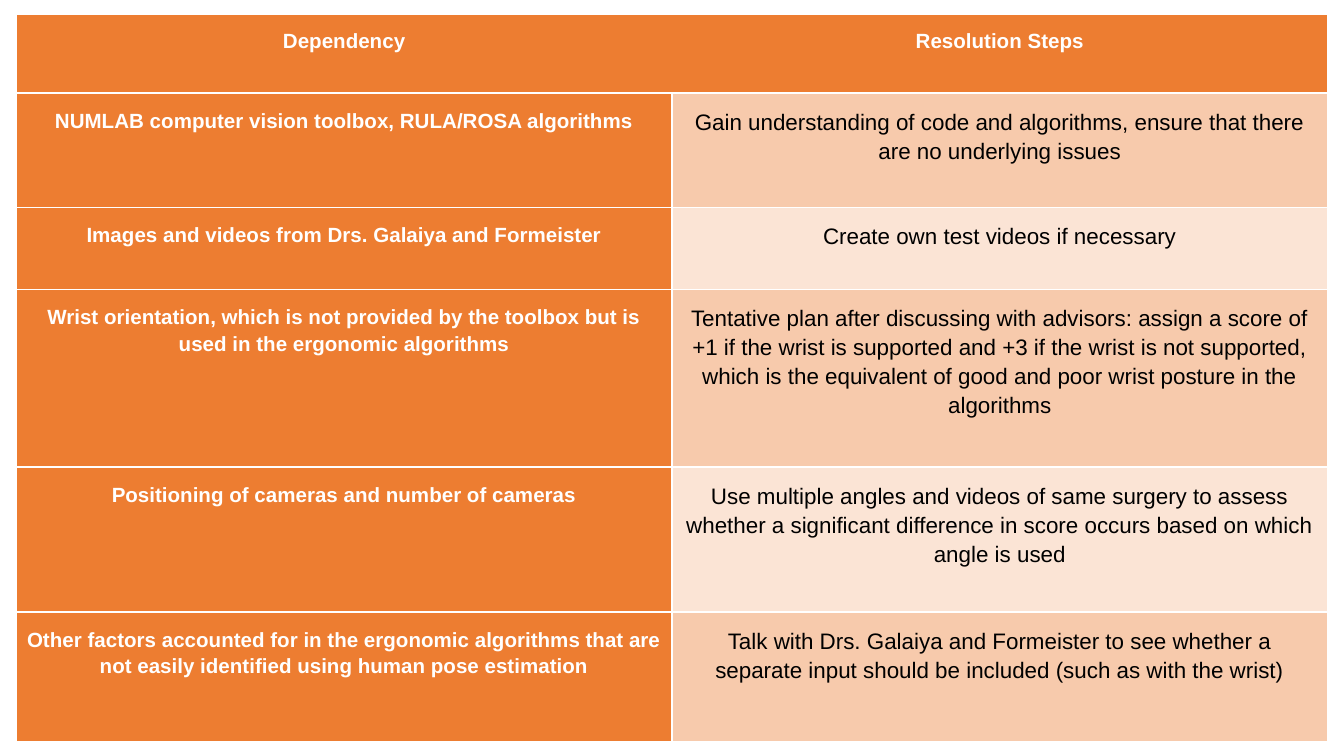
import pptx
import pptx.dml.color
import pptx.enum.text
import pptx.oxml
import pptx.oxml.ns
import pptx.util
from pptx.util import Cm, Pt

# Content: dependency, resolution steps, row height in cm
ROWS = [
    ("Dependency", "Resolution Steps", 1.5),
    ("NUMLAB computer vision toolbox, RULA/ROSA algorithms",
     "Gain understanding of code and algorithms, ensure that there are no "
     "underlying issues", 2.16),
    ("Images and videos from Drs. Galaiya and Formeister",
     "Create own test videos if necessary", 1.55),
    ("Wrist orientation, which is not provided by the toolbox but is used in "
     "the ergonomic algorithms",
     "Tentative plan after discussing with advisors: assign a score of +1 if "
     "the wrist is supported and +3 if the wrist is not supported, which is "
     "the equivalent of good and poor wrist posture in the algorithms", 3.35),
    ("Positioning of cameras and number of cameras",
     "Use multiple angles and videos of same surgery to assess whether a "
     "significant difference in score occurs based on which angle is used", 2.74),
    ("Other factors accounted for in the ergonomic algorithms that are not "
     "easily identified using human pose estimation",
     "Talk with Drs. Galaiya and Formeister to see whether a separate input "
     "should be included (such as with the wrist)", 2.46),
]

THEME = {
    "accent": "ED7D31",
    "bands": ("FBE4D5", "F7CAAC"),
    "border": "FFFFFF",
    "heading": {"size": Pt(11), "bold": True, "name": "Arial"},
    "heading_color": "FFFFFF",
    "body": {"size": Pt(12), "bold": False, "name": "Arial"},
    "body_color": "000000",
}
PARAGRAPH = {
    "alignment": pptx.enum.text.PP_ALIGN.CENTER,
    "line_spacing": 1.15,
    "space_before": Pt(12),
}
MARGINS = {
    "margin_left": Cm(0.18), "margin_right": Cm(0.18),
    "margin_top": Cm(0.25), "margin_bottom": Cm(0.25),
}
COLUMN_WIDTH = 12.39


def set_values(target, values):
    for name, value in values.items():
        setattr(target, name, value)


def rgb(color):
    return pptx.dml.color.RGBColor.from_string(color)


def set_borders(cell, hidden_side):
    """Draw 1 pt lines on every side, except the hidden one."""
    properties = cell._tc.get_or_add_tcPr()
    for index, side in enumerate(("lnL", "lnR", "lnT", "lnB")):
        fill = "<a:noFill/>" if side == hidden_side else (
            f'<a:solidFill><a:srgbClr val="{THEME["border"]}"/></a:solidFill>')
        line = pptx.oxml.parse_xml(
            f'<a:{side} {pptx.oxml.ns.nsdecls("a")} w="{Pt(1)}">{fill}</a:{side}>')
        properties.insert(index, line)


def fill_cell(cell, text, row, column):
    is_heading = row == 0 or column == 0
    kind = "heading" if is_heading else "body"
    cell.fill.solid()
    cell.fill.fore_color.rgb = rgb(
        THEME["accent"] if is_heading else THEME["bands"][row % 2])
    set_values(cell, MARGINS)
    paragraph = cell.text_frame.paragraphs[0]
    set_values(paragraph, PARAGRAPH)
    run = paragraph.add_run()
    run.text = text
    set_values(run.font, THEME[kind])
    run.font.color.rgb = rgb(THEME[kind + "_color"])
    # The two header cells have no line between them
    set_borders(cell, ("lnR", "lnL")[column] if row == 0 else None)


# Slide
presentation = pptx.Presentation()
presentation.slide_width, presentation.slide_height = Cm(25.4), Cm(14.28)
slide = presentation.slides.add_slide(presentation.slide_layouts[6])

# Table
total_height = sum(height for *_, height in ROWS)
table = slide.shapes.add_table(
    len(ROWS), 2, Cm(0.31), Cm(0.26), Cm(2 * COLUMN_WIDTH), Cm(total_height)).table
set_values(table, {"first_row": False, "horz_banding": False})
for table_column in table.columns:
    table_column.width = Cm(COLUMN_WIDTH)
for row, (*texts, height) in enumerate(ROWS):
    table.rows[row].height = Cm(height)
    for column, text in enumerate(texts):
        fill_cell(table.cell(row, column), text, row, column)

presentation.save("out.pptx")
